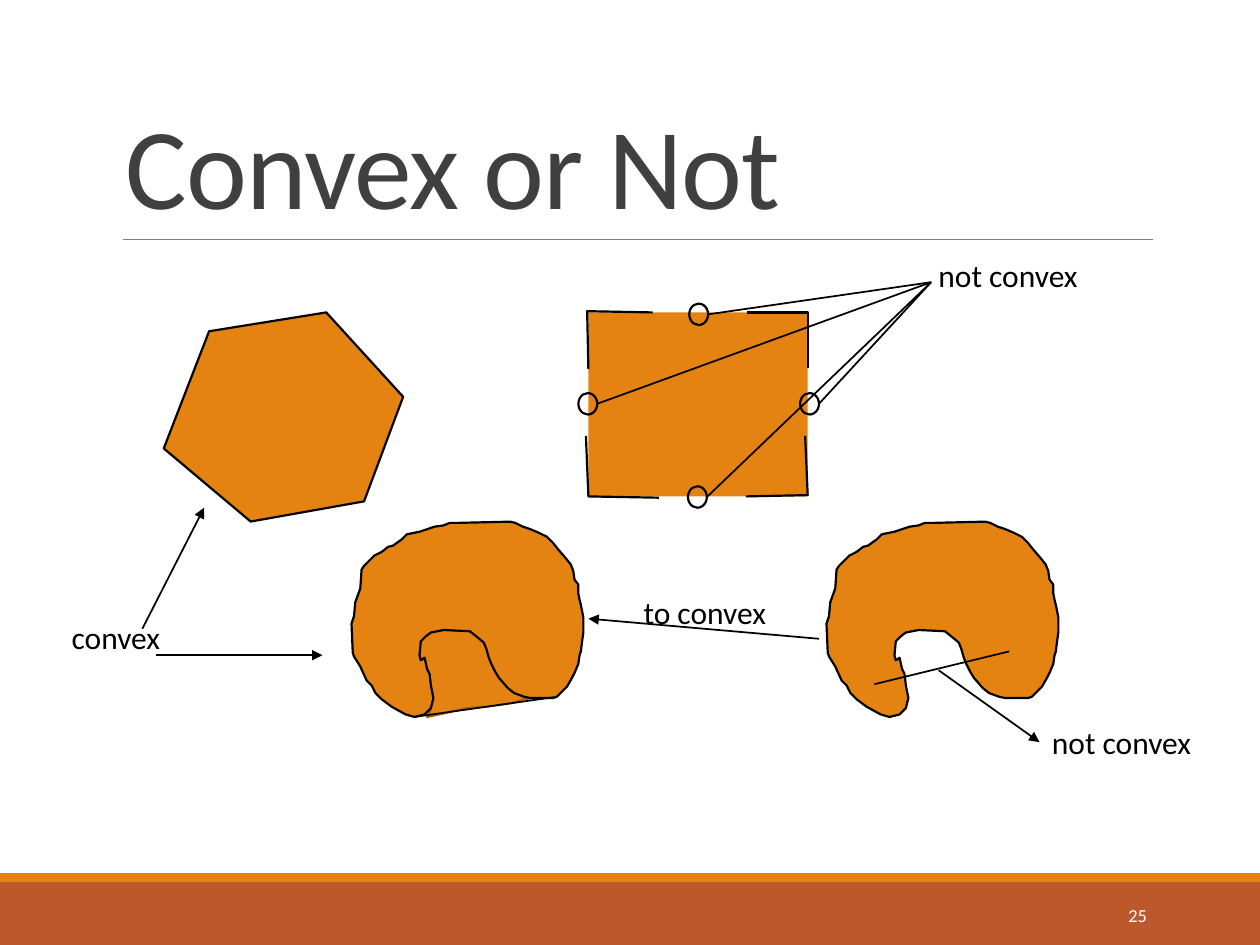
from lxml import etree
from pptx import Presentation
from pptx import util as u
from pptx.dml.color import RGBColor
from pptx.enum import shapes, text
from pptx.oxml.ns import qn

THEME = dict(
    font="Calibri", orange="E48312", rust="BD582C", brown="A9610D", ink="000000",
    title="404040", rule="808080", white="FFFFFF",
    title_pt=66, label_pt=18, number_pt=10.5, outline_pt=1.25, line_pt=1, rule_pt=0.5,
)

HEXAGON = [(2.59, 2.48), (1.66, 2.63), (1.3, 3.56), (1.99, 4.14), (2.89, 3.98), (3.2, 3.15)]

SQUARE = (4.67, 2.48, 1.74, 1.46)
CORNERS = [
    [(5.93, 2.48), (6.41, 2.48), (6.41, 2.92)],
    [(5.18, 2.48), (4.66, 2.47), (4.67, 2.93)],
    [(6.39, 3.46), (6.41, 3.93), (5.92, 3.94)],
    [(4.65, 3.46), (4.67, 3.94), (5.23, 3.95)],
]
GAP_SIZE = (0.15, 0.17)
GAPS = [(5.47, 2.41), (4.59, 3.12), (5.46, 3.86), (6.35, 3.12)]
FAN_TIP = (7.39, 2.24)

# Horseshoe outline: inner arch, right foot, outer arch, left foot
HORSESHOE = [
    (3.34, 5.24), (3.33, 5.2), (3.34, 5.09), (3.38, 5.05), (3.42, 5.02), (3.52, 5),
    (3.73, 5.01), (3.78, 5.05), (3.84, 5.1), (3.86, 5.15), (3.88, 5.22), (3.9, 5.27),
    (3.93, 5.33), (3.96, 5.38), (4.03, 5.46), (4.08, 5.5), (4.16, 5.53), (4.21, 5.54),
    (4.39, 5.54), (4.42, 5.53), (4.45, 5.5), (4.5, 5.45), (4.54, 5.38), (4.56, 5.34),
    (4.59, 5.27), (4.6, 5.2), (4.61, 5.17), (4.62, 5.09), (4.63, 5.02), (4.63, 4.9),
    (4.61, 4.8), (4.6, 4.76), (4.59, 4.71), (4.59, 4.64), (4.56, 4.6), (4.55, 4.53),
    (4.53, 4.48), (4.49, 4.43), (4.43, 4.36), (4.39, 4.31), (4.34, 4.26), (4.28, 4.23),
    (4.21, 4.2), (4.15, 4.18), (4.09, 4.15), (4.05, 4.14), (3.63, 4.15), (3.57, 4.15),
    (3.52, 4.17), (3.45, 4.18), (3.39, 4.2), (3.33, 4.22), (3.23, 4.24), (3.19, 4.28),
    (3.12, 4.33), (3.08, 4.34), (3.03, 4.38), (2.97, 4.41), (2.89, 4.49), (2.87, 4.52),
    (2.86, 4.67), (2.82, 4.78), (2.81, 4.89), (2.79, 4.95), (2.8, 5.18), (2.81, 5.21),
    (2.86, 5.29), (2.91, 5.4), (2.95, 5.44), (2.98, 5.5), (3.03, 5.55), (3.11, 5.61),
    (3.22, 5.67), (3.29, 5.69), (3.37, 5.67), (3.42, 5.62), (3.44, 5.54), (3.42, 5.44),
    (3.41, 5.35), (3.39, 5.31), (3.37, 5.22),
]
OPEN_SHIFT = 3.77
HULL_FILL = [
    (3.39, 5.69), (3.53, 5.66), (3.7, 5.62), (3.85, 5.61), (4.06, 5.58), (4.16, 5.55),
    (4.28, 5.53), (4.33, 5.49), (4.36, 5.43), (4.39, 5.3), (4.38, 4.92), (4.3, 4.84),
    (4.22, 4.8), (4.08, 4.76), (3.95, 4.73), (3.7, 4.7), (3.58, 4.71), (3.47, 4.76),
    (3.37, 4.85), (3.32, 4.91), (3.28, 5.01), (3.25, 5.08), (3.23, 5.15), (3.2, 5.2),
    (3.23, 5.3), (3.28, 5.36), (3.33, 5.48), (3.39, 5.58), (3.42, 5.63),
]
HULL_EDGE = ((3.29, 5.69), (4.42, 5.53))
CHORD = ((6.94, 5.43), (8.01, 5.17))
ARROWS = [
    ((7.45, 5.32), (8.25, 5.89)),
    ((6.5, 5.07), (4.67, 4.91)),
    ((1.13, 4.99), (1.62, 4.03)),
    ((1.24, 5.2), (2.56, 5.2)),
]
LABELS = [
    ("not convex", 7.35, 1.98, 1.53),
    ("not convex", 8.25, 5.69, 1.41),
    ("convex", 0.47, 4.86, 0.92),
    ("to convex", 5.01, 4.66, 1.23),
]


def color(name):
    return RGBColor.from_string(THEME[name])


def style(sp, fill=None, line=None):
    sp.shadow.inherit = False
    if fill:
        sp.fill.solid()
        sp.fill.fore_color.rgb = color(fill)
    else:
        sp.fill.background()
    if line:
        sp.line.color.rgb = color(line)
        sp.line.width = u.Pt(THEME["outline_pt"])
    else:
        sp.line.fill.background()


def add_preset(s, kind, box, fill=None, line=None):
    style(s.shapes.add_shape(kind, *map(u.Inches, box)), fill, line)


def add_outline(s, points, fill=None, line="ink", close=True):
    start, *rest = [(u.Inches(x), u.Inches(y)) for x, y in points]
    builder = s.shapes.build_freeform(*start)
    builder.add_line_segments(rest, close=close)
    style(builder.convert_to_shape(), fill, line)


def add_line(s, start, end, line="ink", width="line_pt", arrow=False):
    c = s.shapes.add_connector(shapes.MSO_CONNECTOR.STRAIGHT, *map(u.Inches, start + end))
    c.line.color.rgb = color(line)
    c.line.width = u.Pt(THEME[width])
    if arrow:
        etree.SubElement(c.line._get_or_add_ln(), qn("a:tailEnd"), type="triangle")
    etree.SubElement(c._element.spPr, qn("a:effectLst"))


def add_text(s, content, box, size, fill, anchor=text.MSO_ANCHOR.TOP):
    """Add a one-run text box; return its paragraph and run."""
    tf = s.shapes.add_textbox(*map(u.Inches, box)).text_frame
    tf.word_wrap = True
    tf.vertical_anchor = anchor
    p = tf.paragraphs[0]
    r = p.add_run()
    r.text = content
    r.font.name, r.font.size = THEME["font"], u.Pt(THEME[size])
    r.font.color.rgb = color(fill)
    return p, r


def add_frame(s):
    rect = shapes.MSO_SHAPE.RECTANGLE
    add_preset(s, rect, (0, 7, 10, 0.5), "rust")
    add_preset(s, rect, (0, 6.93, 10, 0.07), "orange")
    add_line(s, (0.98, 1.9), (9.15, 1.9), "rule", "rule_pt")
    p, r = add_text(s, "Convex or Not", (0.9, 0.31, 8.25, 1.59), "title_pt", "title",
                    text.MSO_ANCHOR.BOTTOM)
    p.line_spacing = 0.85
    r.font._element.set("spc", "-50")
    p, r = add_text(s, "25", (8.12, 7.06, 1.08, 0.4), "number_pt", "white",
                    text.MSO_ANCHOR.MIDDLE)
    p.alignment = text.PP_ALIGN.RIGHT


def add_broken_square(s):
    add_preset(s, shapes.MSO_SHAPE.RECTANGLE, SQUARE, "orange")
    for corner in CORNERS:
        add_outline(s, corner, close=False)
    w, h = GAP_SIZE
    for x, y in GAPS:
        add_preset(s, shapes.MSO_SHAPE.OVAL, (x, y, w, h), line="ink")
        add_line(s, (x + w, y + h / 2), FAN_TIP)


def add_horseshoes(s):
    add_outline(s, [(x + OPEN_SHIFT, y) for x, y in HORSESHOE], "orange")
    add_line(s, *CHORD)
    add_outline(s, HULL_FILL, "orange", "brown")
    add_outline(s, HORSESHOE, "orange")
    add_line(s, *HULL_EDGE)


def main():
    prs = Presentation()
    prs.slide_width, prs.slide_height = u.Inches(10), u.Inches(7.5)
    s = prs.slides.add_slide(prs.slide_layouts[6])
    add_frame(s)
    add_outline(s, HEXAGON, "orange")
    add_broken_square(s)
    add_horseshoes(s)
    for start, end in ARROWS:
        add_line(s, start, end, arrow=True)
    for label, x, y, w in LABELS:
        p, r = add_text(s, label, (x, y, w, 0.4), "label_pt", "ink")
    prs.save("out.pptx")


if __name__ == "__main__":
    main()
